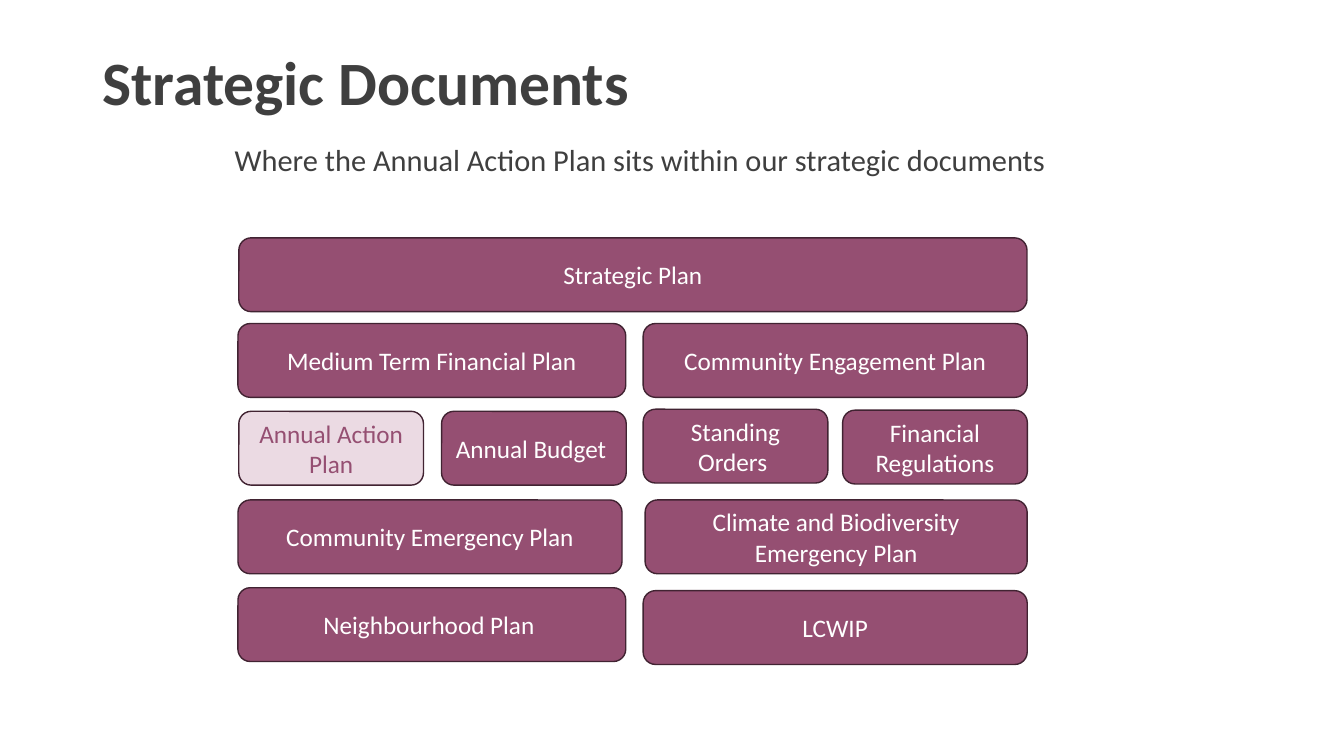
from pptx import Presentation
from pptx.dml.color import RGBColor
from pptx.enum.shapes import MSO_SHAPE as Shape
from pptx.enum.text import MSO_ANCHOR as Anchor, PP_ALIGN as Align
from pptx.util import Pt

COLORS = {
    "text": "3F3F3F",
    "plum": "954F72",
    "pale": "EBDAE3",
    "outline": "412332",
    "white": "FFFFFF",
}


def color(name):
    return RGBColor.from_string(COLORS[name])


def write(frame, text, size, ink, bold=False):
    frame.word_wrap = True
    frame.text = text
    font = frame.paragraphs[0].runs[0].font
    font.name, font.size, font.bold = "Calibri", Pt(size), bold
    font.color.rgb = color(ink)


deck = Presentation()
deck.slide_width, deck.slide_height = Pt(960), Pt(540)
slide = deck.slides.add_slide(deck.slide_layouts[6])

# Title and subtitle: text, box, size, bold, line spacing, anchor
headings = [
    ("Strategic Documents", (66, 8.64, 828, 104.4), 44, True, 0.9, Anchor.MIDDLE),
    ("Where the Annual Action Plan sits within our strategic documents",
     (160.56, 104.4, 638.64, 35.28), 21.7, False, 0.7, Anchor.TOP),
]
for text, box, size, bold, spacing, anchor in headings:
    frame = slide.shapes.add_textbox(*map(Pt, box)).text_frame
    write(frame, text, size, "text", bold)
    frame.vertical_anchor = anchor
    frame.paragraphs[0].line_spacing = spacing

# Document blocks: text, left, top, width
BLOCK_HEIGHT = 52.7
LEFT, RIGHT = 170, 459.4
WIDE, HALF, QUARTER = 563, 277, 131.9
documents = [
    ("Strategic Plan", LEFT + 0.6, 169.9, WIDE),
    ("Medium Term Financial Plan", LEFT, 231.1, HALF),
    ("Community Engagement Plan", RIGHT, 231.1, 274.3),
    ("Annual Action Plan", LEFT + 0.6, 293.8, QUARTER),
    ("Annual Budget ", 315.4, 293.8, QUARTER),
    ("Standing Orders ", RIGHT, 292.3, QUARTER),
    ("Financial Regulations", 601.9, 293, QUARTER),
    ("Community Emergency Plan", LEFT, 357.1, 274.3),
    ("Climate and Biodiversity Emergency Plan", RIGHT + 1.4, 357.1, 272.9),
    ("Neighbourhood Plan ", LEFT, 419.8, HALF),
    ("LCWIP", RIGHT, 421.9, 274.3),
]
for text, left, top, width in documents:
    block = slide.shapes.add_shape(
        Shape.ROUNDED_RECTANGLE, Pt(left), Pt(top), Pt(width), Pt(BLOCK_HEIGHT))
    highlighted = text == "Annual Action Plan"
    block.shadow.inherit = False
    block.fill.solid()
    block.fill.fore_color.rgb = color("pale" if highlighted else "plum")
    block.line.color.rgb = color("outline")
    block.line.width = Pt(1)
    write(block.text_frame, text, 18, "plum" if highlighted else "white")
    block.text_frame.vertical_anchor = Anchor.MIDDLE
    block.text_frame.paragraphs[0].alignment = Align.CENTER

deck.save("out.pptx")
